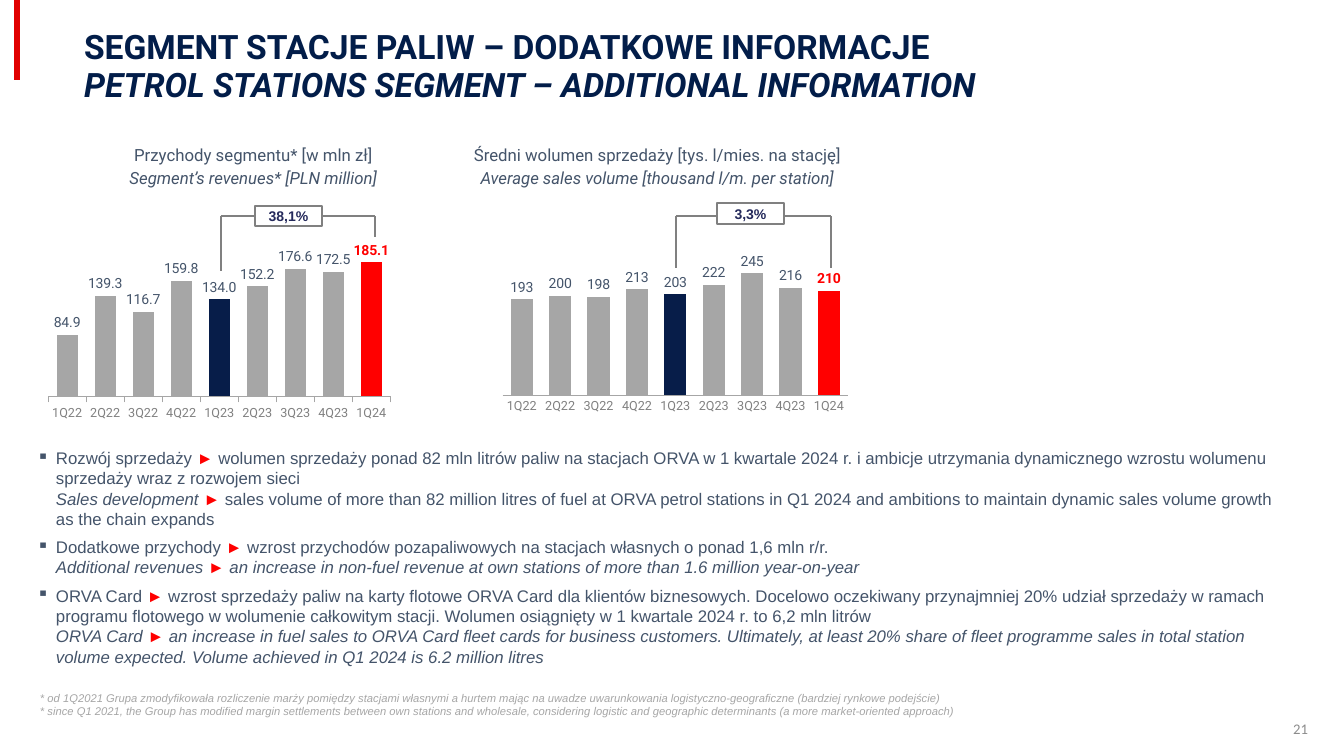
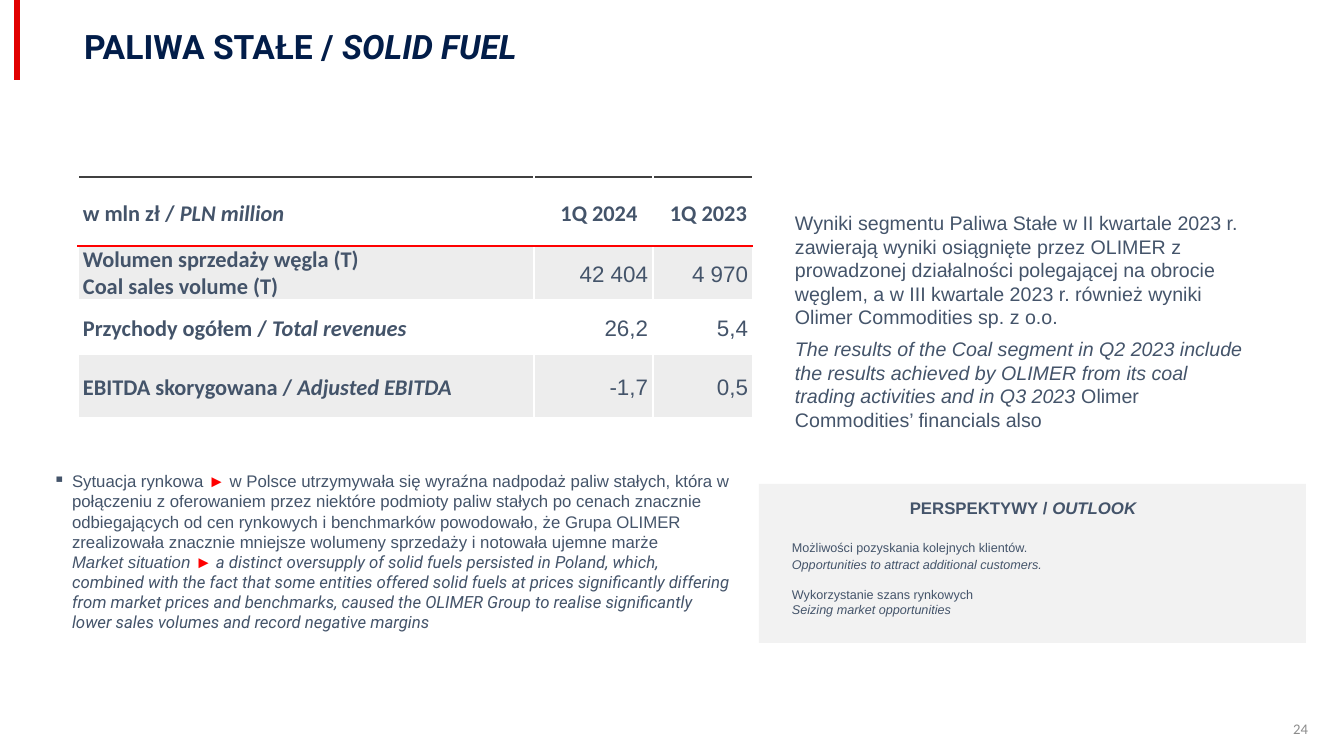
from pptx import Presentation
from pptx.chart.data import CategoryChartData
from pptx.dml.color import RGBColor
from pptx.enum.chart import XL_CHART_TYPE, XL_LABEL_POSITION, XL_TICK_MARK
from pptx.enum.shapes import MSO_CONNECTOR, MSO_SHAPE
from pptx.enum.text import MSO_ANCHOR, PP_ALIGN
from pptx.oxml import parse_xml
from pptx.oxml.ns import nsdecls, qn
from pptx.util import Pt

LEFT, CENTER, RIGHT = PP_ALIGN.LEFT, PP_ALIGN.CENTER, PP_ALIGN.RIGHT
TOP, MIDDLE = MSO_ANCHOR.TOP, MSO_ANCHOR.MIDDLE
COLUMNS, OUTSIDE_END = XL_CHART_TYPE.COLUMN_CLUSTERED, XL_LABEL_POSITION.OUTSIDE_END
TICK_NONE, TICK_OUT = XL_TICK_MARK.NONE, XL_TICK_MARK.OUTSIDE
RECTANGLE, STRAIGHT = MSO_SHAPE.RECTANGLE, MSO_CONNECTOR.STRAIGHT

EMU_PER_PX = 914400 / 100.8
COLORS = {
    "bar": "E10000", "title": "021D49", "text": "44546A", "red": "FF0000",
    "navy": "071D49", "column": "A6A6A6", "axis": "808080", "badge": "24295B",
    "page": "8C8C8C", "panel": "F2F2F2", "band": "EDEDED", "rule": "404040",
    "white": "FFFFFF",
}

# Text styles; _underscores_ in a text mark italics, and each ► is red
BODY = {"font": "Arial", "size": 12, "color": "text"}
TITLE = {"font": "Roboto", "size": 24, "color": "title", "bold": True, "line": 0.9}
CAPTION = {**BODY, "font": "Roboto", "align": CENTER, "line": 1.14}
FOOTNOTE = {**BODY, "size": 8, "color": "column"}
COMMENT = {**BODY, "size": 14}
HEADING = {**BODY, "bold": True, "align": CENTER}
OUTLOOK = {**BODY, "size": 9}
BADGE = {"font": "Arial", "size": 10, "color": "badge", "bold": True, "align": CENTER}
PAGE_NUMBER = {"font": "Calibri", "size": 10.5, "color": "page", "align": RIGHT}
CELL_LABEL = {"font": "Calibri", "size": 16, "color": "text", "bold": True, "line": 1.15}
CELL_HEAD = {**CELL_LABEL, "align": CENTER, "indent": 11}
CELL_VALUE = {**CELL_LABEL, "font": "Arial", "bold": False, "align": RIGHT}

BULLET = {"margin": 19, "indent": -19, "bullet": "▪"}
NEXT_BULLET = {**BULLET, "before": 6}
TRANSLATION = {"margin": 19}
WIDE_INSET, SLIM_INSET, BADGE_INSET = (24, 12), (10, 5), (0, 5)

QUARTERS = ["1Q22", "2Q22", "3Q22", "4Q22", "1Q23", "2Q23", "3Q23", "4Q23", "1Q24"]
BASE_QUARTER, LAST_QUARTER = 4, 8
CHARTS = [
    {
        "caption": ["Przychody segmentu* [w mln zł]", "_Segment’s revenues* [PLN million]_"],
        "caption_box": (98, 130, 311, 69),
        "box": (37, 222, 372, 199), "plot": (0.03, 0.15, 0.92, 0.73),
        "values": [84.9, 139.3, 116.7, 159.8, 134.0, 152.2, 176.6, 172.5, 185.1],
        "format": "#,##0.0", "maximum": 200, "gap": 80, "tick": TICK_OUT,
        "change": "38,1%", "badge_box": (255, 206, 67, 20),
        "bracket": {"x": (221, 375), "top": 216, "bottoms": (271, 237)},
    },
    {
        "caption": ["Średni wolumen sprzedaży [tys. l/mies. na stację]",
                    "_Average sales volume [thousand l/m. per station]_"],
        "caption_box": (434, 130, 447, 69),
        "box": (499, 222, 360, 199), "plot": (0.01, 0.12, 0.96, 0.75),
        "values": [193, 200, 198, 213, 203, 222, 245, 216, 210],
        "format": "0", "maximum": 300, "gap": 73, "tick": TICK_NONE,
        "change": "3,3%", "badge_box": (717, 203, 67, 21),
        "bracket": {"x": (676, 831), "top": 216, "bottoms": (268, 268)},
    },
]
STATION_NOTES = [
    ("Rozwój sprzedaży ► wolumen sprzedaży ponad 82 mln litrów paliw na stacjach ORVA w 1 kwartale "
     "2024 r. i ambicje utrzymania dynamicznego wzrostu wolumenu sprzedaży wraz z rozwojem sieci",
     BULLET),
    ("_Sales development_ ► sales volume of more than 82 million litres of fuel at ORVA petrol "
     "stations in Q1 2024 and ambitions to maintain dynamic sales volume growth as the chain expands",
     TRANSLATION),
    ("Dodatkowe przychody ► wzrost przychodów pozapaliwowych na stacjach własnych o ponad "
     "1,6 mln r/r.", NEXT_BULLET),
    ("_Additional revenues ► an increase in non-fuel revenue at own stations of more than "
     "1.6 million year-on-year_", TRANSLATION),
    ("ORVA Card ► wzrost sprzedaży paliw na karty flotowe ORVA Card dla klientów biznesowych. "
     "Docelowo oczekiwany przynajmniej 20% udział sprzedaży w ramach programu flotowego w wolumenie "
     "całkowitym stacji. Wolumen osiągnięty w 1 kwartale 2024 r. to 6,2 mln litrów", NEXT_BULLET),
    ("_ORVA Card ► an increase in fuel sales to ORVA Card fleet cards for business customers. "
     "Ultimately, at least 20% share of fleet programme sales in total station volume expected. "
     "Volume achieved in Q1 2024 is 6.2 million litres_", TRANSLATION),
]
STATION_FOOTNOTES = [
    "_* od 1Q2021 Grupa zmodyfikowała rozliczenie marży pomiędzy stacjami własnymi a hurtem mając na "
    "uwadze uwarunkowania logistyczno-geograficzne (bardziej rynkowe podejście)_",
    "_* since Q1 2021, the Group has modified margin settlements between own stations and wholesale, "
    "considering logistic and geographic determinants (a more market-oriented approach)_",
]

COAL_TABLE = [
    (["w mln zł / _PLN million_"], "1Q 2024", "1Q 2023"),
    (["Wolumen sprzedaży węgla (T)", "Coal sales volume (T)"], "42 404", "4 970"),
    (["Przychody ogółem / _Total revenues_"], "26,2", "5,4"),
    (["EBITDA skorygowana / _Adjusted EBITDA_"], "-1,7", "0,5"),
]
COAL_COLUMNS, COAL_ROWS = (456, 119, 100), (69, 54, 54, 64)
COAL_COMMENT = [
    "Wyniki segmentu Paliwa Stałe w II kwartale 2023 r. zawierają wyniki osiągnięte przez OLIMER z "
    "prowadzonej działalności polegającej na obrocie węglem, a w III kwartale 2023 r. również wyniki "
    "Olimer Commodities sp. z o.o.",
    ("_The results of the Coal segment in Q2 2023 include the results achieved by OLIMER from its "
     "coal trading activities and in Q3 2023 _Olimer Commodities’ financials also", {"before": 6}),
]
COAL_NOTES = [
    ("Sytuacja rynkowa ► w Polsce utrzymywała się wyraźna nadpodaż paliw stałych, która w połączeniu "
     "z oferowaniem przez niektóre podmioty paliw stałych po cenach znacznie odbiegających od cen "
     "rynkowych i benchmarków powodowało, że Grupa OLIMER zrealizowała znacznie mniejsze wolumeny "
     "sprzedaży i notowała ujemne marże", BULLET),
    ("_Market situation ► a distinct oversupply of solid fuels persisted in Poland, which, combined "
     "with the fact that some entities offered solid fuels at prices significantly differing from "
     "market prices and benchmarks, caused the OLIMER Group to realise significantly lower sales "
     "volumes and record negative margins_", {**TRANSLATION, "tail_font": "Roboto"}),
]
COAL_OUTLOOK = [
    ("Możliwości pozyskania kolejnych klientów.", {"line": 1.14}),
    ("_Opportunities to attract additional customers._", {"line": 1.14}),
    ("Wykorzystanie szans rynkowych", {"before": 10}),
    "_Seizing market opportunities_",
]


def px(length):
    return round(length * EMU_PER_PX)


def place(box):
    return [px(length) for length in box]


def color(name):
    return RGBColor.from_string(COLORS[name])


def set_font(target, style, **changes):
    style = {**style, **changes}
    values = {"name": style["font"], "size": Pt(style["size"]),
              "bold": style.get("bold", False), "italic": style.get("italic", False)}
    for name, value in values.items():
        setattr(target, name, value)
    target.color.rgb = color(style["color"])


def write_runs(para, text, style):
    """Split the text at italic marks and arrows and add one run per piece."""
    font = style["font"]
    for number, part in enumerate(text.split("_")):
        for index, piece in enumerate(part.split("►")):
            if index:
                arrow = para.add_run()
                arrow.text = "►"
                set_font(arrow.font, style, color="red")
                font = style.get("tail_font", font)
            if piece:
                span = para.add_run()
                span.text = piece
                set_font(span.font, style, font=font, italic=number % 2 == 1)


def write(frame, paragraphs, base):
    """Fill a frame; a paragraph is a text or a pair of text and style changes."""
    for number, item in enumerate(paragraphs):
        text, changes = (item, {}) if isinstance(item, str) else item
        style = {**base, **changes}
        para = frame.add_paragraph() if number else frame.paragraphs[0]
        para.alignment = style.get("align", LEFT)
        para.line_spacing = style.get("line", 1.0)
        para.space_before = Pt(style.get("before", 0))
        properties = para._p.get_or_add_pPr()
        properties.set("marL", str(px(style.get("margin", 0))))
        properties.set("indent", str(px(style.get("indent", 0))))
        if "bullet" in style:
            properties.append(parse_xml(f'<a:buChar {nsdecls("a")} char="{style["bullet"]}"/>'))
        write_runs(para, text, style)


def set_frame(frame, inset, anchor):
    frame.word_wrap = True
    frame.vertical_anchor = anchor
    frame.margin_left = frame.margin_right = px(inset[0])
    frame.margin_top = frame.margin_bottom = px(inset[1])


def add_text(page, box, paragraphs, style, inset=WIDE_INSET, anchor=TOP):
    frame = page.shapes.add_textbox(*place(box)).text_frame
    set_frame(frame, inset, anchor)
    write(frame, paragraphs, style)


def add_rectangle(page, box, fill, line=None):
    shape = page.shapes.add_shape(RECTANGLE, *place(box))
    shape.shadow.inherit = False
    shape.fill.solid()
    shape.fill.fore_color.rgb = color(fill)
    if line:
        shape.line.color.rgb = color(line)
        shape.line.width = Pt(1)
    else:
        shape.line.fill.background()
    return shape


def add_line(page, *ends):
    line = page.shapes.add_connector(STRAIGHT, *place(ends))
    line.line.color.rgb = color("axis")
    line.line.width = Pt(1.5)
    line._element.spPr.append(parse_xml(f'<a:effectLst {nsdecls("a")}/>'))


def add_page(deck, titles, number):
    """Add a page with the red bar, the title lines and the page number."""
    page = deck.slides.add_slide(deck.slide_layouts[6])
    add_rectangle(page, (14, 0, 6, 80), "bar")
    for row, title in enumerate(titles):
        add_text(page, (74, 20 + 38 * row, 1236, 58), [title], TITLE, SLIM_INSET, MIDDLE)
    add_text(page, (960, 709, 358, 40), [number], PAGE_NUMBER, SLIM_INSET, MIDDLE)
    return page


def set_plot_area(chart, plot):
    area = chart.element.xpath("c:chart/c:plotArea")[0]
    for layout in area.findall(qn("c:layout")):
        area.remove(layout)
    sizes = "".join(f'<c:{tag} val="{value}"/>' for tag, value in zip("xywh", plot))
    area.insert(0, parse_xml(
        f'<c:layout {nsdecls("c")}><c:manualLayout><c:layoutTarget val="inner"/>'
        f'<c:xMode val="edge"/><c:yMode val="edge"/>{sizes}</c:manualLayout></c:layout>'))


def add_column_chart(page, item):
    data = CategoryChartData()
    data.categories = QUARTERS
    data.add_series("Series 1", item["values"])
    chart = page.shapes.add_chart(COLUMNS, *place(item["box"]), data).chart
    chart.has_legend = chart.has_title = False
    label = {"font": "Roboto", "size": 10, "color": "text"}
    set_font(chart.font, label)
    set_plot_area(chart, item["plot"])

    values, quarters = chart.value_axis, chart.category_axis
    values.minimum_scale, values.maximum_scale = 0, item["maximum"]
    values.has_major_gridlines = values.visible = False
    quarters.major_tick_mark = item["tick"]
    quarters.format.line.color.rgb = color("column")
    quarters.format.line.width = Pt(0.75)
    set_font(quarters.tick_labels.font, label, size=9, color="axis")

    plot = chart.plots[0]
    plot.gap_width = item["gap"]
    plot.vary_by_categories = False
    series = plot.series[0]
    points = [(series, "column"), (series.points[BASE_QUARTER], "navy"),
              (series.points[LAST_QUARTER], "red")]
    for part, fill in points:
        part.format.fill.solid()
        part.format.fill.fore_color.rgb = color(fill)
    labels = series.data_labels
    labels.show_value = True
    labels.number_format, labels.number_format_is_linked = item["format"], False
    labels.position = OUTSIDE_END
    set_font(labels.font, label)
    last = series.points[LAST_QUARTER].data_label
    set_font(last.font, label, color="red", bold=True)
    last.position = OUTSIDE_END


def add_change_bracket(page, item):
    bracket = item["bracket"]
    top = bracket["top"]
    start, end = bracket["x"]
    add_line(page, start, top, end, top)
    for x, bottom in zip(bracket["x"], bracket["bottoms"]):
        add_line(page, x, bottom, x, top)
    frame = add_rectangle(page, item["badge_box"], "white", "axis").text_frame
    set_frame(frame, BADGE_INSET, MIDDLE)
    write(frame, [item["change"]], BADGE)


def set_border(cell, side, name):
    cell._tc.get_or_add_tcPr().insert(0, parse_xml(
        f'<a:{side} {nsdecls("a")} w="12700"><a:solidFill><a:srgbClr val="{COLORS[name]}"/>'
        f'</a:solidFill></a:{side}>'))


def add_coal_table(page):
    box = (78, 177, sum(COAL_COLUMNS), sum(COAL_ROWS))
    table = page.shapes.add_table(len(COAL_ROWS), len(COAL_COLUMNS), *place(box)).table
    table.first_row = table.horz_banding = False
    for column, width in zip(table.columns, COAL_COLUMNS):
        column.width = px(width)
    for number, (label, *values) in enumerate(COAL_TABLE):
        table.rows[number].height = px(COAL_ROWS[number])
        label_style = {**CELL_LABEL, "line": 1.0} if len(label) > 1 else CELL_LABEL
        value_style = CELL_VALUE if number else CELL_HEAD
        contents = [(label, label_style)] + [([value], value_style) for value in values]
        for cell, (paragraphs, style) in zip(table.rows[number].cells, contents):
            cell.vertical_anchor = MIDDLE
            cell.margin_left = cell.margin_right = px(5)
            cell.margin_top = cell.margin_bottom = 0
            write(cell.text_frame, paragraphs, style)
            if number % 2:
                cell.fill.solid()
                cell.fill.fore_color.rgb = color("band")
            else:
                cell.fill.background()
            if number == 0:
                set_border(cell, "lnB", "red")
                set_border(cell, "lnT", "rule")
            elif number == 1:
                set_border(cell, "lnT", "red")


def main():
    deck = Presentation()
    deck.slide_width, deck.slide_height = px(1344), px(756)

    page = add_page(deck, ["SEGMENT STACJE PALIW – DODATKOWE INFORMACJE",
                           "_PETROL STATIONS SEGMENT – ADDITIONAL INFORMATION_"], "21")
    for item in CHARTS:
        add_text(page, item["caption_box"], item["caption"], CAPTION)
        add_column_chart(page, item)
        add_change_bracket(page, item)
    add_text(page, (13, 436, 1293, 262), STATION_NOTES, BODY)
    add_text(page, (16, 679, 1200, 51), STATION_FOOTNOTES, FOOTNOTE)

    page = add_page(deck, ["PALIWA STAŁE / _SOLID FUEL_"], "24")
    add_coal_table(page)
    add_text(page, (771, 199, 502, 246), COAL_COMMENT, COMMENT)
    add_text(page, (29, 459, 730, 204), COAL_NOTES, BODY)
    add_rectangle(page, (759, 484, 547, 159), "panel")
    add_text(page, (754, 493, 538, 30), ["PERSPEKTYWY / _OUTLOOK_"], HEADING, SLIM_INSET)
    add_text(page, (768, 526, 539, 103), COAL_OUTLOOK, OUTLOOK)
    deck.save("out.pptx")


if __name__ == "__main__":
    main()
